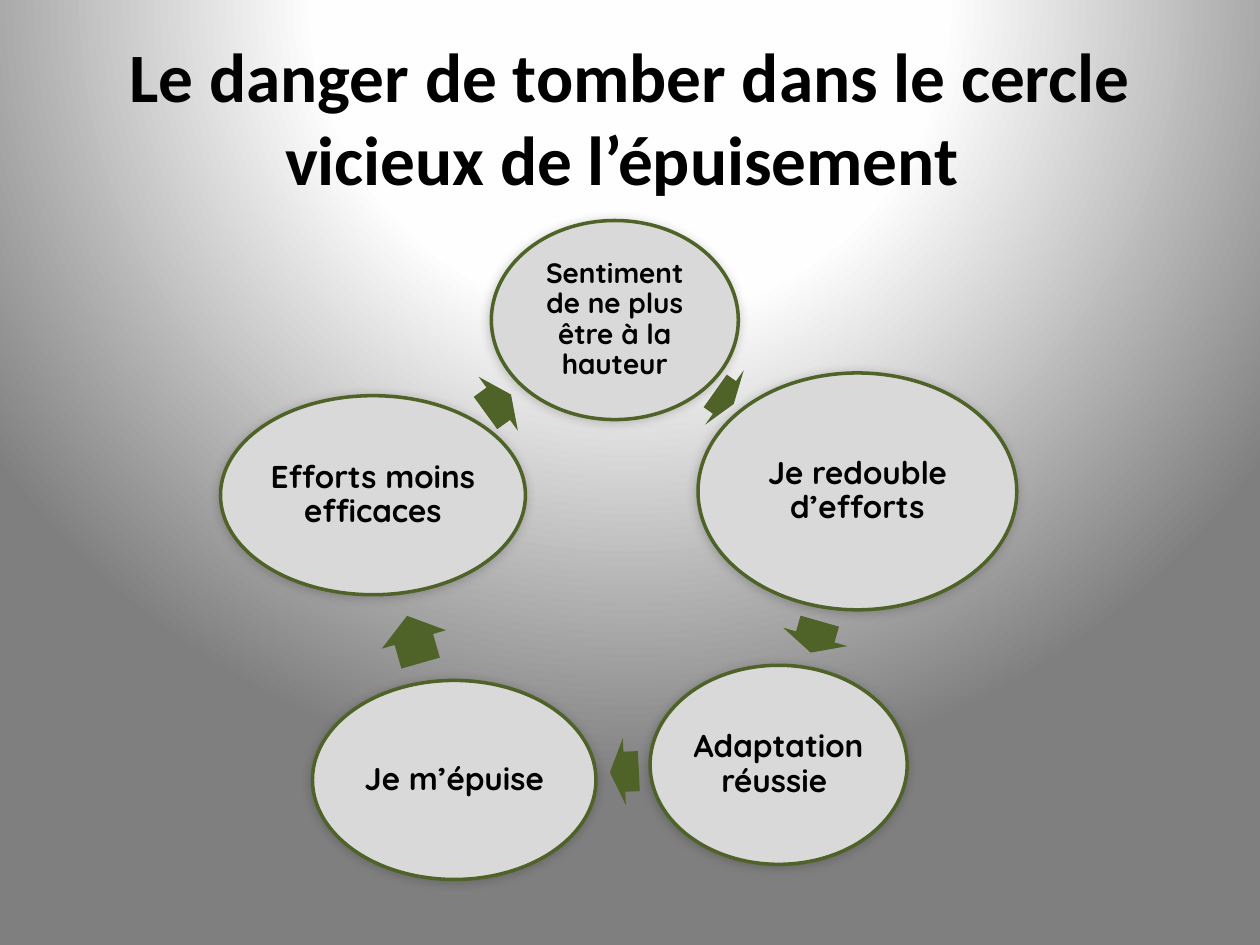
import pptx
import pptx.dml.color
import pptx.enum.dml
import pptx.enum.shapes
import pptx.enum.text
import pptx.oxml
import pptx.oxml.ns
import pptx.util

RGBColor = pptx.dml.color.RGBColor
SHAPES = pptx.enum.shapes.MSO_SHAPE
PX = 9144  # 100 px to the inch

BLACK = RGBColor(0x00, 0x00, 0x00)
GREEN = RGBColor(0x4F, 0x62, 0x28)
LIGHT_GREY = RGBColor(0xD9, 0xD9, 0xD9)
WHITE = RGBColor(0xFF, 0xFF, 0xFF)
NEAR_WHITE = RGBColor(0xFE, 0xFE, 0xFE)
MID_GREY = RGBColor(0x7F, 0x7F, 0x7F)

BACKDROP_STOPS = [(0, WHITE), (40, NEAR_WHITE), (100, MID_GREY)]
TITLE_FONT = {"name": "Calibri", "size": pptx.util.Pt(39.6), "bold": True}
STEP_FONT = {"name": "Quicksand", "size": pptx.util.Pt(18), "bold": True}
FIRST_STEP_FONT = {**STEP_FONT, "size": pptx.util.Pt(16)}

CYCLE_BOX = (175, 175, 632, 523)
# Left, top, width, height inside the cycle box
STEPS = [
    ("Sentiment de ne plus être à la hauteur", (215, 0, 196, 158), FIRST_STEP_FONT),
    ("Je redouble d’efforts", (379, 121, 253, 188), STEP_FONT),
    ("Adaptation réussie ", (341, 353, 204, 158), STEP_FONT),
    ("Je m’épuise", (73, 365, 225, 158), STEP_FONT),
    ("Efforts moins efficaces", (0, 139, 242, 158), STEP_FONT),
]
# Arrow leaving each step, with its rotation in degrees
ARROWS = [
    ((391, 114, 18, 53), 35.3),
    ((459, 304, 26, 53), 106),
    ((309, 411, 23, 53), 177.3),
    ((134, 306, 39, 53), 254),
    ((208, 119, 25, 53), 324),
]


def emu(box):
    return [length * PX for length in box]


def inside(outer, box):
    """Moves a box given relative to outer onto the page."""
    return emu((outer[0] + box[0], outer[1] + box[1], box[2], box[3]))


def parse_drawing(markup):
    namespace = pptx.oxml.ns.nsdecls("a")
    return pptx.oxml.parse_xml(markup.replace(">", f" {namespace}>", 1))


def write_text(frame, text, font):
    frame.word_wrap = True
    frame.auto_size = pptx.enum.text.MSO_AUTO_SIZE.NONE
    frame.vertical_anchor = pptx.enum.text.MSO_ANCHOR.MIDDLE
    para = frame.paragraphs[0]
    para.alignment = pptx.enum.text.PP_ALIGN.CENTER
    span = para.add_run()
    span.text = text
    for name, value in font.items():
        setattr(span.font, name, value)
    span.font.color.rgb = BLACK
    return para


def paint_backdrop(page):
    """Fills the background with a circular gradient centred above the page."""
    page.background.fill.gradient()
    gradient = page.element.find(".//" + pptx.oxml.ns.qn("a:gradFill"))
    stops = "".join(
        f'<a:gs pos="{percent * 1000}"><a:srgbClr val="{color}"/></a:gs>'
        for percent, color in BACKDROP_STOPS
    )
    circle = (
        '<a:path path="circle">'
        '<a:fillToRect l="50000" t="-80000" r="50000" b="180000"/></a:path>'
    )
    filled = parse_drawing(
        f"<a:gradFill><a:gsLst>{stops}</a:gsLst>{circle}</a:gradFill>"
    )
    gradient.getparent().replace(gradient, filled)


def add_title(page, box):
    title = page.shapes.title
    title.left, title.top, title.width, title.height = emu(box)
    text = "Le danger de tomber dans le cercle vicieux de l’épuisement "
    write_text(title.text_frame, text, TITLE_FONT)


def add_soft_shadow(shape):
    shape.shadow.inherit = False
    effects = shape.element.spPr.find(pptx.oxml.ns.qn("a:effectLst"))
    effects.append(parse_drawing(
        '<a:outerShdw blurRad="76200" dist="12700" dir="8100000" rotWithShape="0">'
        '<a:srgbClr val="000000"><a:alpha val="20000"/></a:srgbClr></a:outerShdw>'
    ))


def add_step(page, box, text, font):
    ellipse = page.shapes.add_shape(SHAPES.OVAL, *box)
    ellipse.fill.solid()
    ellipse.fill.fore_color.rgb = LIGHT_GREY
    ellipse.line.color.rgb = GREEN
    ellipse.line.width = pptx.util.Pt(2)
    add_soft_shadow(ellipse)
    frame = ellipse.text_frame
    for side in ("left", "top", "right", "bottom"):
        setattr(frame, f"margin_{side}", 3 * PX)
    write_text(frame, text, font).line_spacing = 0.9


def add_arrow(page, box, rotation):
    arrow = page.shapes.add_shape(SHAPES.RIGHT_ARROW, *box)
    arrow.adjustments[0], arrow.adjustments[1] = 0.6, 0.5
    arrow.rotation = rotation
    arrow.fill.solid()
    arrow.fill.fore_color.rgb = GREEN
    arrow.line.fill.background()
    arrow.shadow.inherit = False


def add_cycle(page, cycle_box):
    for (text, step_box, font), (arrow_box, rotation) in zip(STEPS, ARROWS):
        add_step(page, inside(cycle_box, step_box), text, font)
        add_arrow(page, inside(cycle_box, arrow_box), rotation)


def main():
    deck = pptx.Presentation()
    deck.slide_width, deck.slide_height = emu((1000, 750))
    page = deck.slides.add_slide(deck.slide_layouts.get_by_name("Title Only"))
    paint_backdrop(page)
    add_title(page, (50, 30, 900, 125))
    add_cycle(page, CYCLE_BOX)
    deck.save("out.pptx")


if __name__ == "__main__":
    main()
